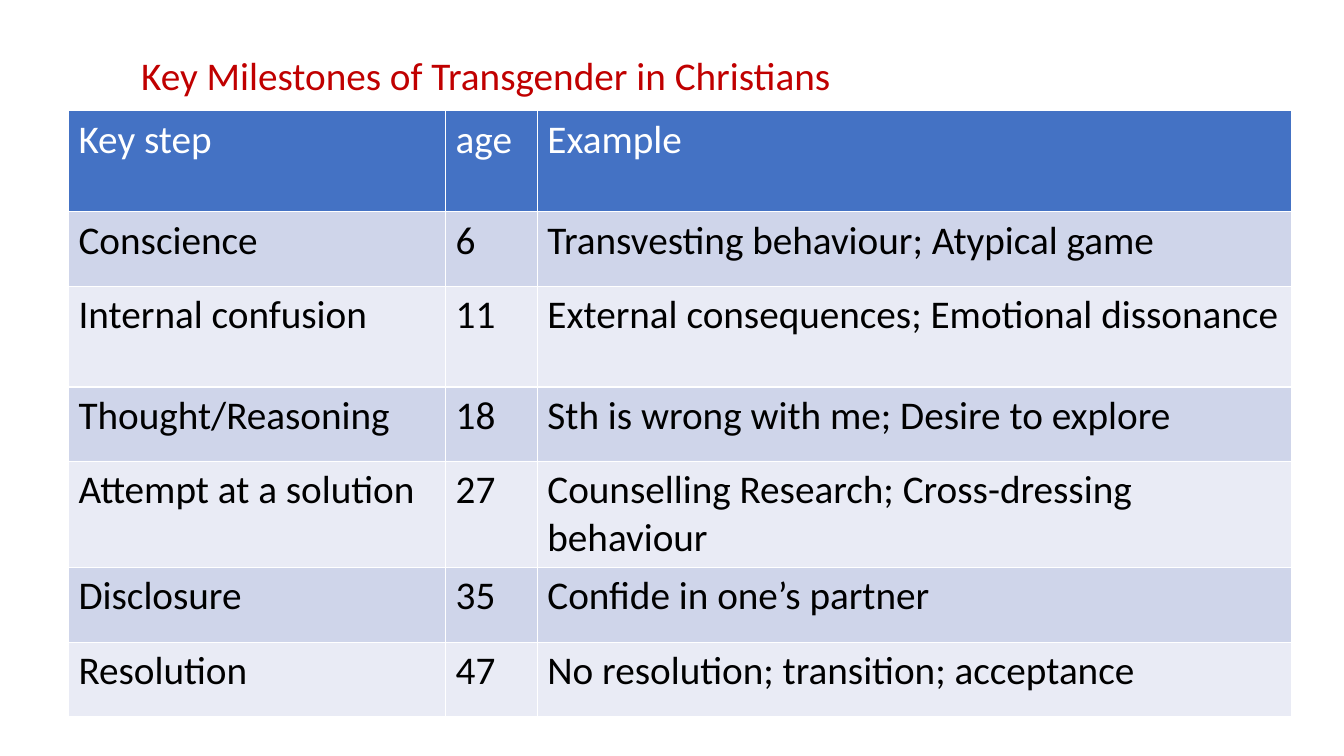
from pptx import Presentation
from pptx import util as u
from pptx.dml.color import RGBColor
from pptx.enum import text

COLORS = {
    "title": "C00000",
    "header": "4472C4",
    "header_text": "FFFFFF",
    "body_text": "000000",
    "odd_row": "CFD5EA",
    "even_row": "E9EBF5",
}
MILESTONES = [
    ("Key step", "age", "Example"),
    ("Conscience", "6", "Transvesting behaviour; Atypical game"),
    ("Internal confusion", "11", "External consequences; Emotional dissonance"),
    ("Thought/Reasoning", "18", "Sth is wrong with me; Desire to explore"),
    ("Attempt at a solution", "27", "Counselling Research; Cross-dressing behaviour"),
    ("Disclosure", "35", "Confide in one’s partner"),
    ("Resolution", "47", "No resolution; transition; acceptance"),
]
COLUMN_WIDTHS = [374, 91, 748]
ROW_HEIGHTS = [100, 74, 100, 74, 100, 74, 74]


def px(length):
    return u.Emu(length * 9144)


class SlideBuilder:
    """Holds the text style and the current slide, and adds its elements."""

    def __init__(self, deck, font="Calibri", size=28):
        self.font = font
        self.size = size
        self.slide = deck.slides.add_slide(deck.slide_layouts[5])

    def style(self, frame, color):
        for para in frame.paragraphs:
            for span in para.runs:
                span.font.name = self.font
                span.font.size = u.Pt(self.size)
                span.font.bold = False
                span.font.color.rgb = RGBColor.from_string(COLORS[color])

    def title(self, wording, left, top, width, height):
        box = self.slide.shapes.title
        box.left, box.top, box.width, box.height = map(px, (left, top, width, height))
        frame = box.text_frame
        frame.text = wording
        frame.word_wrap = True
        frame.vertical_anchor = text.MSO_ANCHOR.MIDDLE
        para = frame.paragraphs[0]
        para.alignment = text.PP_ALIGN.LEFT
        para.line_spacing = 0.9
        self.style(frame, "title")

    def table(self, rows, left, top, widths, heights):
        bounds = map(px, (left, top, sum(widths), sum(heights)))
        table = self.slide.shapes.add_table(len(rows), len(widths), *bounds).table
        for column, width in zip(table.columns, widths):
            column.width = px(width)
        for index, (row, height) in enumerate(zip(table.rows, heights)):
            row.height = px(height)
            fill = "header" if index == 0 else "odd_row" if index % 2 else "even_row"
            color = "body_text" if index else "header_text"
            for cell, wording in zip(row.cells, rows[index]):
                cell.text_frame.text = wording
                cell.fill.solid()
                cell.fill.fore_color.rgb = RGBColor.from_string(COLORS[fill])
                self.style(cell.text_frame, color)


def main():
    deck = Presentation()
    deck.slide_width, deck.slide_height = px(1333), px(750)
    page = SlideBuilder(deck)
    page.title("Key Milestones of Transgender in Christians", 130, 44, 956, 67)
    page.table(MILESTONES, 68, 110, COLUMN_WIDTHS, ROW_HEIGHTS)
    deck.save("out.pptx")


if __name__ == "__main__":
    main()
